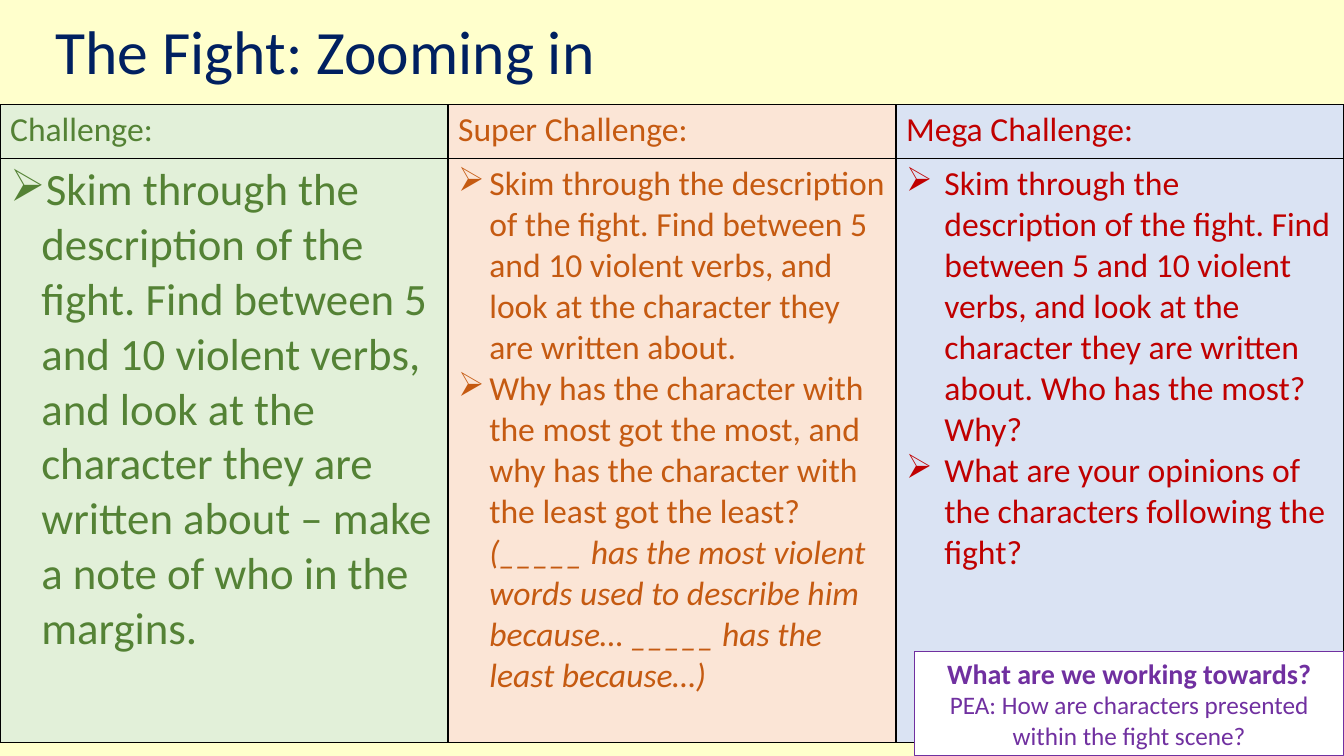
"""Build the three-level challenge slide on zooming in to the fight."""
from lxml.etree import SubElement
from pptx import Presentation
from pptx.dml.color import RGBColor
from pptx.enum.shapes import MSO_SHAPE
from pptx.enum.text import MSO_ANCHOR, PP_ALIGN
from pptx.oxml.ns import qn
from pptx.util import Inches, Pt


def color(code):
    return RGBColor.from_string(code)


def add_run(para, text, size, code, bold=False, slant=False):
    run = para.add_run()
    run.text = text
    font = run.font
    font.name, font.size = "Calibri", Pt(size)
    font.bold, font.italic = bold, slant
    font.color.rgb = color(code)


deck = Presentation()
deck.slide_width, deck.slide_height = Inches(13.33), Inches(7.5)
wide, high = deck.slide_width, deck.slide_height
slide = deck.slides.add_slide(deck.slide_layouts[5])
slide.background.fill.solid()
slide.background.fill.fore_color.rgb = color("FFFFCC")

title = slide.shapes.title
title.left, title.top = Inches(0.45), Inches(0.12)
title.width, title.height = Inches(9), Inches(0.84)
frame = title.text_frame
frame.word_wrap = True
frame.vertical_anchor = MSO_ANCHOR.MIDDLE
para = frame.paragraphs[0]
para.alignment, para.line_spacing = PP_ALIGN.LEFT, 0.9
add_run(para, "The Fight: Zooming in", 44, "002060")

skim = ("Skim through the description of the fight. Find between 5 and 10 violent verbs, "
        "and look at the character they are written about")
levels = [
    ("Challenge:", "548235", "E2F0D9", 32, 0.31,
     [[(skim + " – make a note of who in the margins.", False)]]),
    ("Super Challenge:", "C55A11", "FBE5D6", 24, 0.31,
     [[(skim + ".", False)],
      [("Why has the character with the most got the most, and why has the "
        "character with the least got the least?", False),
       (" (_____ has the most violent words used to describe him because… "
        "_____ has the least because…)", True)]]),
    ("Mega Challenge:", "C00000", "DAE3F3", 24, 0.38,
     [[(skim + ". Who has the most? Why?", False)],
      [("What are your opinions of the characters following the fight?", False)]]),
]

rows = [0.53, 5.8]
table = slide.shapes.add_table(2, 3, 0, Inches(1.04), wide, Inches(sum(rows))).table
table.first_row = table.horz_banding = False
for row, tall in zip(table.rows, rows):
    row.height = Inches(tall)

for col, (head, ink, paper, size, dent, points) in enumerate(levels):
    table.columns[col].width = wide // 3
    top, body = table.cell(0, col), table.cell(1, col)
    add_run(top.text_frame.paragraphs[0], head, 24, ink)
    for num, point in enumerate(points):
        frame = body.text_frame
        para = frame.add_paragraph() if num else frame.paragraphs[0]
        for text, slant in point:
            add_run(para, text, size, ink, slant=slant)
        props = para._p.get_or_add_pPr()
        props.set("marL", str(Inches(dent)))
        props.set("indent", str(-Inches(dent)))
        SubElement(props, qn("a:buChar")).set("char", "➢")
    for cell in (top, body):
        props = cell._tc.get_or_add_tcPr()
        for side in "LRTB":
            line = SubElement(props, qn("a:ln" + side), w=str(Pt(1)))
            fill = SubElement(line, qn("a:solidFill"))
            SubElement(fill, qn("a:srgbClr"), val="000000")
        cell.fill.solid()
        cell.fill.fore_color.rgb = color(paper)

left, upper = Inches(9.07), Inches(6.46)
goal = slide.shapes.add_shape(MSO_SHAPE.RECTANGLE, left, upper, wide - left, high - upper)
goal.shadow.inherit = False
goal.fill.solid()
goal.fill.fore_color.rgb = color("FFFFFF")
goal.line.color.rgb = color("7030A0")
goal.line.width = Pt(0.75)
frame = goal.text_frame
frame.word_wrap = True
frame.vertical_anchor = MSO_ANCHOR.TOP
lines = [("What are we working towards?", 20, True),
         ("PEA: How are characters presented within the fight scene?", 18, False)]
for num, (text, size, bold) in enumerate(lines):
    para = frame.add_paragraph() if num else frame.paragraphs[0]
    para.alignment = PP_ALIGN.CENTER
    add_run(para, text, size, "7030A0", bold)

deck.save("out.pptx")
